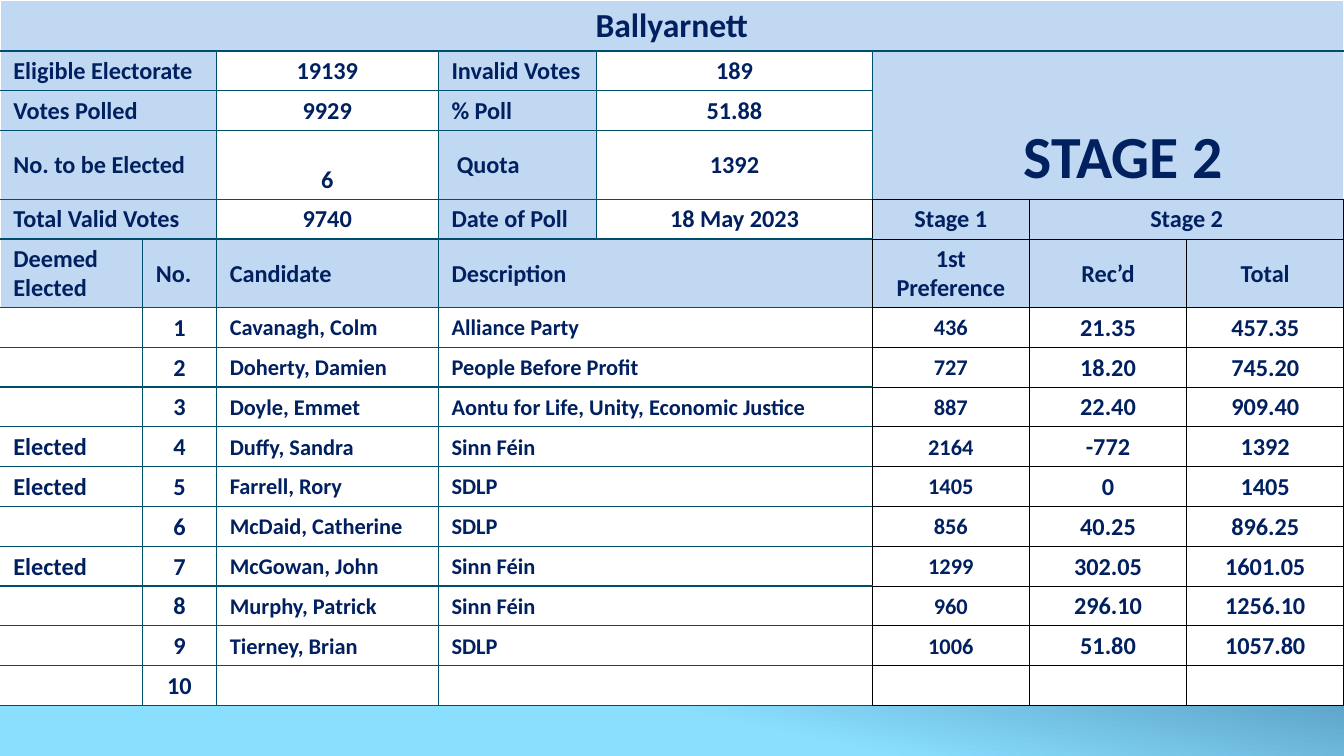
"""Builds the stage two count slide for the Ballyarnett election."""
from lxml.etree import SubElement
from pptx import Presentation
from pptx.dml.color import RGBColor
from pptx.enum.text import MSO_ANCHOR as Anchor, PP_ALIGN as Align
from pptx.oxml.ns import qn
from pptx.util import Inches, Pt

NAVY = RGBColor(0x00, 0x20, 0x60)
PALE = RGBColor(0xC1, 0xD8, 0xF2)
WHITE = RGBColor(0xFF, 0xFF, 0xFF)
BLACK = RGBColor(0x00, 0x00, 0x00)
TEAL = RGBColor(0x00, 0x4E, 0x6C)
DEEP = RGBColor(0x0D, 0x38, 0x68)
SKY = RGBColor(0x8A, 0xDF, 0xFF)

WIDTHS = [1.06, 0.55, 1.65, 1.18, 2.05, 1.17, 1.17, 1.17]
TITLE, TALL, TOTAL = 0.38, 0.51, 5.25
ROWS = 16
LINES = {WHITE: 1, TEAL: 0.75, BLACK: 0.5}

FACTS = [
    ("Eligible Electorate", "19139", "Invalid Votes", "189"),
    ("Votes Polled", "9929", "% Poll", "51.88"),
    ("No. to be Elected", "6", "Quota", "1392"),
    ("Total Valid Votes", "9740", "Date of Poll", "18 May 2023"),
]
HEADS = [(0, "Deemed Elected"), (1, "No."), (2, "Candidate"),
         (3, "Description"), (5, "1st Preference"), (6, "Rec’d"), (7, "Total")]
VOTES = [
    ("", "Cavanagh, Colm", "Alliance Party", "436", "21.35", "457.35"),
    ("", "Doherty, Damien", "People Before Profit", "727", "18.20", "745.20"),
    ("", "Doyle, Emmet", "Aontu for Life, Unity, Economic Justice",
     "887", "22.40", "909.40"),
    ("Elected", "Duffy, Sandra", "Sinn Féin", "2164", "-772", "1392"),
    ("Elected", "Farrell, Rory", "SDLP", "1405", "0", "1405"),
    ("", "McDaid, Catherine", "SDLP", "856", "40.25", "896.25"),
    ("Elected", "McGowan, John", "Sinn Féin", "1299", "302.05", "1601.05"),
    ("", "Murphy, Patrick", "Sinn Féin", "960", "296.10", "1256.10"),
    ("", "Tierney, Brian", "SDLP", "1006", "51.80", "1057.80"),
    ("", "", "", "", "", ""),
]


def write(frame, text, size=13, align=Align.LEFT):
    para = frame.paragraphs[0]
    para.alignment = align
    if not text:
        para._p.get_or_add_endParaRPr().set("sz", str(size * 100))
        return
    run = para.add_run()
    run.text = text
    font = run.font
    font.name, font.size, font.bold = "Calibri", Pt(size), True
    font.color.rgb = NAVY


def border(cell, edges):
    props = cell._tc.get_or_add_tcPr()
    for spot, (side, color) in enumerate(zip("LRTB", edges)):
        line = SubElement(props, qn(f"a:ln{side}"), w=str(Pt(LINES[color])))
        fill = SubElement(line, qn("a:solidFill"))
        SubElement(fill, qn("a:srgbClr"), val=str(color))
        props.insert(spot, line)


class Deck:
    def __init__(self):
        self.show = Presentation()
        self.show.slide_width = Inches(10)
        self.show.slide_height = Inches(10 * 9 / 16)
        self.slide = self.show.slides.add_slide(self.show.slide_layouts[6])

    def back(self):
        fill = self.slide.background.fill
        fill.gradient()
        fill.gradient_angle = 360 - 102
        for stop, place, color in zip(fill.gradient_stops, (0.42, 0.82), (DEEP, SKY)):
            stop.position = place
            stop.color.rgb = color

    def grid(self):
        frame = self.slide.shapes.add_table(
            ROWS, len(WIDTHS), 0, 0, Inches(10), Inches(TOTAL))
        self.table = frame.table
        self.table.first_row = self.table.horz_banding = False
        for column, width in zip(self.table.columns, WIDTHS):
            column.width = Inches(width)
        short = (TOTAL - TITLE - 2 * TALL) / (ROWS - 3)
        special = {0: TITLE, 3: TALL, 5: TALL}
        for index, row in enumerate(self.table.rows):
            row.height = Inches(special.get(index, short))

    def cell(self, row, col, text, fill=WHITE, size=13, align=Align.CENTER,
             anchor=Anchor.MIDDLE, high=1, wide=1, left=0.1, edges=None):
        if not edges:
            last = col + wide - 1
            edges = [BLACK] * 4 if col > 4 else [TEAL] * 4
            if col == 0:
                edges[0] = WHITE
            if last == 4 and row > 3:
                edges[1] = BLACK
        cell = self.table.cell(row, col)
        if high * wide > 1:
            cell.merge(self.table.cell(row + high - 1, col + wide - 1))
        for down in range(high):
            for over in range(wide):
                part = self.table.cell(row + down, col + over)
                part.margin_top, part.margin_bottom = Inches(0.04), Inches(0.03)
                part.fill.solid()
                part.fill.fore_color.rgb = fill
                border(part, edges)
                if down or over:
                    write(part.text_frame, "", size=12)
        cell.margin_left, cell.margin_right = Inches(left), Inches(0.1)
        cell.vertical_anchor = anchor
        write(cell.text_frame, text, size=size, align=align)


def main():
    deck = Deck()
    deck.back()
    deck.grid()
    deck.cell(0, 0, "Ballyarnett", fill=PALE, size=18, wide=8,
              edges=[WHITE, WHITE, WHITE, TEAL])
    deck.cell(1, 5, "STAGE 2", fill=PALE, size=32, high=3, wide=3, left=0.33,
              anchor=Anchor.BOTTOM, edges=[TEAL, WHITE, TEAL, BLACK])

    for row, (name, count, label, value) in enumerate(FACTS, 1):
        low = Anchor.BOTTOM if row == 3 else Anchor.MIDDLE
        deck.cell(row, 0, name, fill=PALE, align=Align.LEFT, wide=2)
        deck.cell(row, 2, count, anchor=low)
        deck.cell(row, 3, label, fill=PALE, align=Align.LEFT,
                  left=0.14 if row == 3 else 0.1)
        deck.cell(row, 4, value)

    deck.cell(4, 5, "Stage 1", fill=PALE)
    deck.cell(4, 6, "Stage 2", fill=PALE, wide=2)
    for col, head in HEADS:
        deck.cell(5, col, head, fill=PALE, wide=2 if col == 3 else 1,
                  align=Align.CENTER if col > 4 else Align.LEFT)

    for number, (state, name, party, first, moved, total) in enumerate(VOTES, 1):
        row = number + 5
        deck.cell(row, 0, state, size=13 if state else 12, align=Align.LEFT)
        deck.cell(row, 1, str(number))
        deck.cell(row, 2, name, size=12, align=Align.LEFT)
        deck.cell(row, 3, party, size=12, align=Align.LEFT, wide=2)
        deck.cell(row, 5, first, size=12)
        deck.cell(row, 6, moved)
        deck.cell(row, 7, total)

    deck.show.save("out.pptx")


if __name__ == "__main__":
    main()
